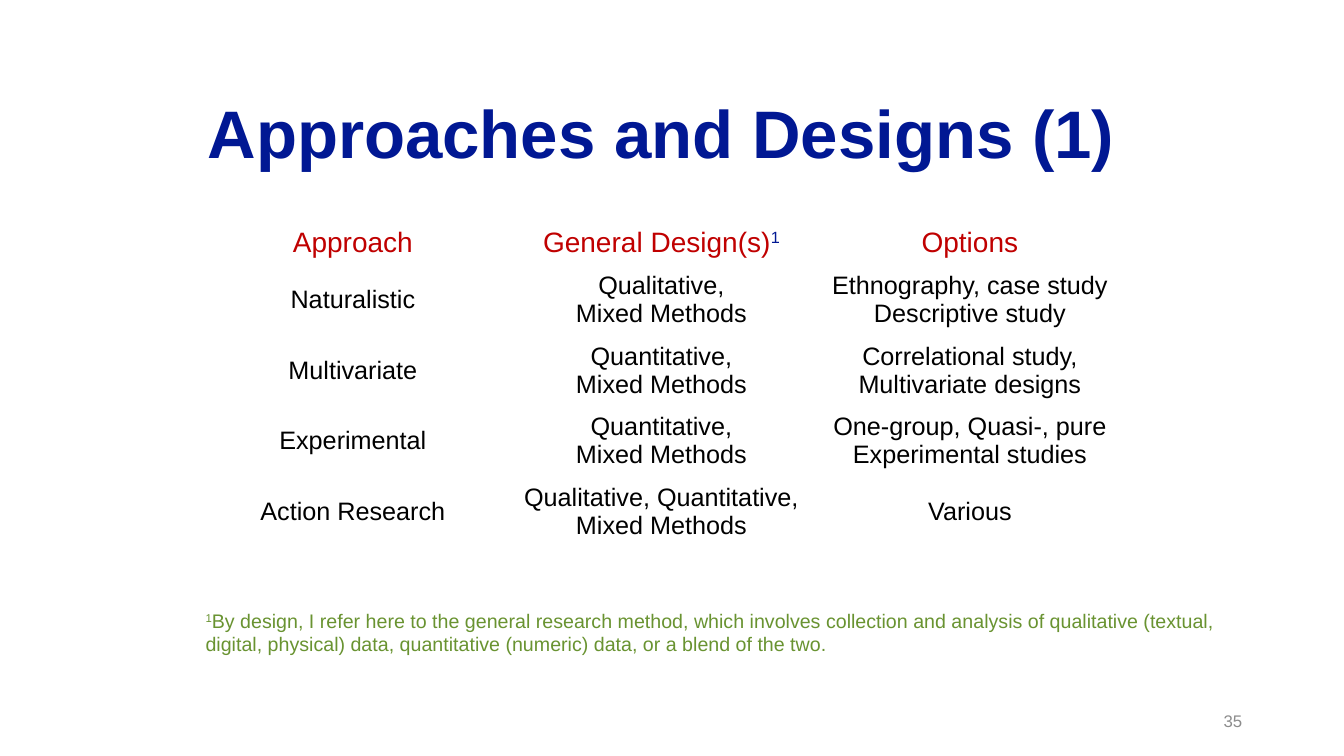
import pptx
import pptx.dml.color
import pptx.enum.text
import pptx.util

Inches = pptx.util.Inches
RGBColor = pptx.dml.color.RGBColor
ALIGN = pptx.enum.text.PP_ALIGN
MIDDLE = pptx.enum.text.MSO_ANCHOR.MIDDLE
TOP = pptx.enum.text.MSO_ANCHOR.TOP

NAVY = RGBColor(0x01, 0x18, 0x93)
RED = RGBColor(0xC0, 0x00, 0x00)
GREEN = RGBColor(0x69, 0x93, 0x31)
GREY = RGBColor(0x8C, 0x8C, 0x8C)
BLACK = RGBColor(0x00, 0x00, 0x00)

HEADER = ["Approach", "General Design(s)", "Options"]
DESIGNS = [
    ["Naturalistic", "Qualitative,\nMixed Methods",
     "Ethnography, case study\nDescriptive study"],
    ["Multivariate", "Quantitative,\nMixed Methods",
     "Correlational study,\nMultivariate designs"],
    ["Experimental", "Quantitative,\nMixed Methods",
     "One-group, Quasi-, pure Experimental studies"],
    ["Action Research", "Qualitative, Quantitative, Mixed Methods", "Various"],
]
FOOTNOTE = ("By design, I refer here to the general research method, which involves "
            "collection and analysis of qualitative (textual,\n"
            "digital, physical) data, quantitative (numeric) data, or a blend of the two.")


def add_run(p, text, size, color, bold=False, superscript=False):
    r = p.add_run()
    r.text = text
    r.font.name = "Arial"
    r.font.size = pptx.util.Pt(size)
    r.font.bold = bold
    r.font.color.rgb = color
    if superscript:
        r._r.get_or_add_rPr().set("baseline", "30000")


def write(tf, text, size=18, color=BLACK, bold=False, align=ALIGN.CENTER,
          spacing=None, mark=None):
    """Fill a text frame, one paragraph a line; mark is a leading superscript."""
    for i, line in enumerate(text.split("\n")):
        p = tf.add_paragraph() if i else tf.paragraphs[0]
        p.alignment = align
        p.line_spacing = spacing
        if mark and i == 0:
            add_run(p, mark, size, color, superscript=True)
        add_run(p, line, size, color, bold)


class SlideBuilder:
    def __init__(self, prs):
        self.slide = prs.slides.add_slide(prs.slide_layouts[6])

    def text(self, box, text, anchor=TOP, **style):
        sp = self.slide.shapes.add_textbox(*map(Inches, box))
        tf = sp.text_frame
        tf.word_wrap = True
        tf.vertical_anchor = anchor
        write(tf, text, **style)

    def table(self, box, header, rows, header_height, row_height):
        grid = [header] + rows
        table = self.slide.shapes.add_table(
            len(grid), len(header), *map(Inches, box)).table
        table.first_row = table.horz_banding = False
        for i, values in enumerate(grid):
            table.rows[i].height = Inches(row_height if i else header_height)
            style = {} if i else {"size": 20, "color": RED}
            for j, value in enumerate(values):
                cell = table.cell(i, j)
                cell.fill.background()
                cell.vertical_anchor = MIDDLE
                write(cell.text_frame, value, **style)
        return table


def main():
    prs = pptx.Presentation()
    prs.slide_width, prs.slide_height = Inches(13.33), Inches(7.5)
    s = SlideBuilder(prs)
    s.text((9.42, 6.95, 3, 0.4), "35", MIDDLE, size=12, color=GREY, align=ALIGN.RIGHT)
    s.text((1.64, 0.8, 9.84, 1.11), "Approaches and Designs (1)", MIDDLE,
           size=48, color=NAVY, bold=True, spacing=0.9)
    table = s.table((1.97, 2.19, 9.18, 3.06), HEADER, DESIGNS, 0.42, 0.66)
    add_run(table.cell(0, 1).text_frame.paragraphs[0], "1", 20, NAVY, superscript=True)
    s.text((1.94, 5.99, 10.32, 0.57), FOOTNOTE, size=14, color=GREEN,
           align=ALIGN.LEFT, mark="1")
    prs.save("out.pptx")


if __name__ == "__main__":
    main()
